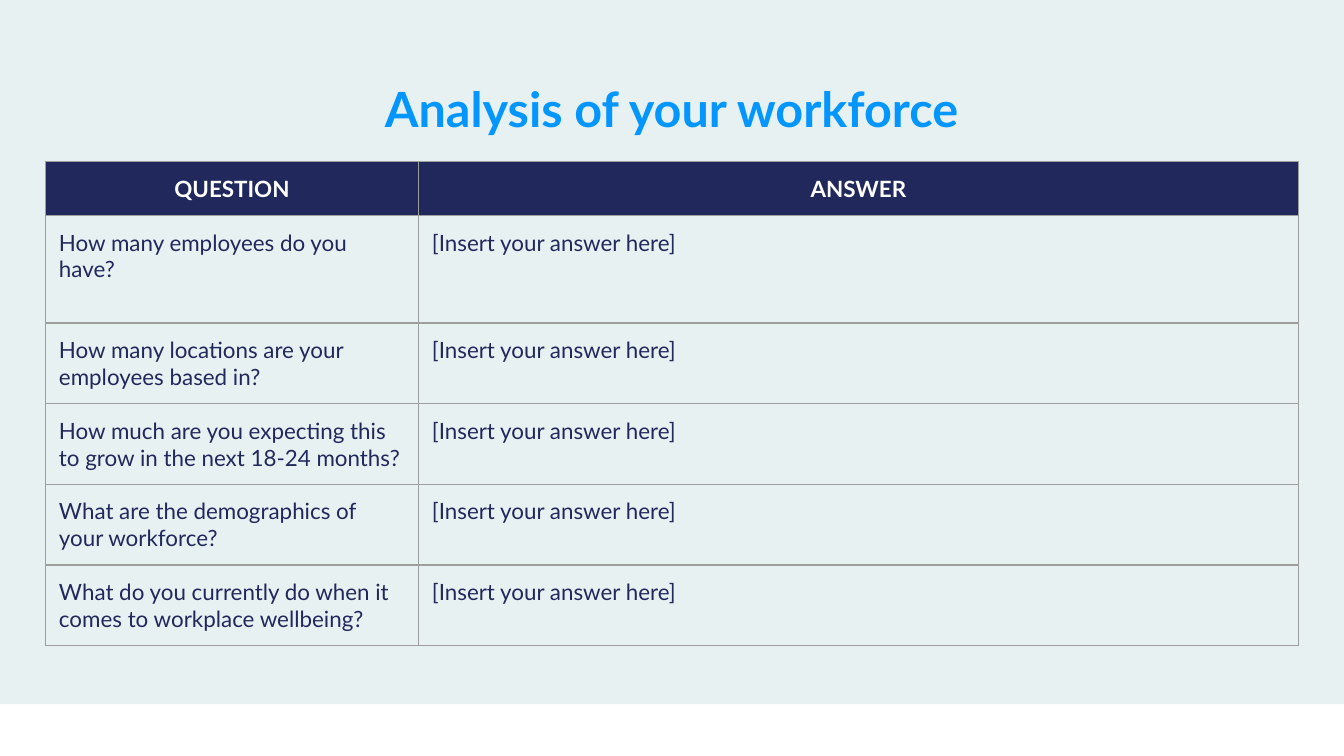
from lxml.etree import SubElement
from pptx import Presentation
from pptx.dml.color import RGBColor
from pptx.enum.shapes import MSO_SHAPE
from pptx.enum.text import MSO_ANCHOR, PP_ALIGN
from pptx.oxml.ns import qn
from pptx.util import Pt

TITLE = "Analysis of your workforce"
HEADERS = ["QUESTION", "ANSWER"]
QUESTIONS = [
    "How many employees do you have?",
    "How many locations are your employees based in?",
    "How much are you expecting this to grow in the next 18-24 months?",
    "What are the demographics of your workforce?",
    "What do you currently do when it comes to workplace wellbeing?",
]
ANSWER = "[Insert your answer here]"

PALE, NAVY, BLUE, WHITE, GREY = "E8F1F2", "21295C", "0496FF", "FFFFFF", "9E9E9E"
TITLE_FORMAT = {"size": Pt(26), "bold": True, "color": BLUE}
HEADER_FORMAT = {"size": Pt(12), "bold": True, "color": WHITE}
BODY_FORMAT = {"size": Pt(12), "bold": False, "color": NAVY}

SLIDE_WIDTH, SLIDE_HEIGHT = 720, 405
MARGIN = 24.4
CONTENT_WIDTH = SLIDE_WIDTH - 2 * MARGIN
INSET = 7.2
QUESTION_WIDTH = 199.8
COLUMN_WIDTHS = [QUESTION_WIDTH, CONTENT_WIDTH - QUESTION_WIDTH]
LINE_HEIGHT = 14.4
TEXT_LINES = [1, 3, 2, 2, 2, 2]
ROW_HEIGHTS = [lines * LINE_HEIGHT + 2 * INSET for lines in TEXT_LINES]


def color(value):
    return RGBColor.from_string(value)


def write(paragraph, text, formats, alignment):
    paragraph.alignment = alignment
    run = paragraph.add_run()
    run.text = text
    run.font.name = "Lato"
    for name, value in formats.items():
        if name == "color":
            run.font.color.rgb = color(value)
        else:
            setattr(run.font, name, value)


def set_insets(target, prefix=""):
    for side in ("left", "right", "top", "bottom"):
        setattr(target, f"margin_{side}", Pt(INSET))


def add_borders(cell):
    properties = cell._tc.get_or_add_tcPr()
    for tag in ("a:lnL", "a:lnR", "a:lnT", "a:lnB"):
        line = SubElement(properties, qn(tag), w=str(Pt(0.75)))
        fill = SubElement(line, qn("a:solidFill"))
        SubElement(fill, qn("a:srgbClr"), val=GREY)


def add_background(slide):
    shape = slide.shapes.add_shape(MSO_SHAPE.RECTANGLE, 0, 0, Pt(SLIDE_WIDTH), Pt(377.3))
    shape.shadow.inherit = False
    shape.fill.solid()
    shape.fill.fore_color.rgb = color(PALE)
    shape.line.fill.background()


def add_title(slide):
    box = slide.shapes.add_textbox(Pt(MARGIN), Pt(35.3), Pt(CONTENT_WIDTH), Pt(45.4))
    frame = box.text_frame
    frame.word_wrap = True
    frame.vertical_anchor = MSO_ANCHOR.TOP
    set_insets(frame)
    write(frame.paragraphs[0], TITLE, TITLE_FORMAT, PP_ALIGN.CENTER)


def add_question_table(slide):
    rows = [HEADERS] + [[question, ANSWER] for question in QUESTIONS]
    table = slide.shapes.add_table(
        len(rows), len(HEADERS), Pt(MARGIN), Pt(86.6),
        Pt(CONTENT_WIDTH), Pt(sum(ROW_HEIGHTS))).table
    table.horz_banding = False
    for column, width in zip(table.columns, COLUMN_WIDTHS):
        column.width = Pt(width)
    for row_index, (row, height, texts) in enumerate(zip(table.rows, ROW_HEIGHTS, rows)):
        row.height = Pt(height)
        for cell, text in zip(row.cells, texts):
            set_insets(cell)
            add_borders(cell)
            paragraph = cell.text_frame.paragraphs[0]
            if row_index == 0:
                cell.fill.solid()
                cell.fill.fore_color.rgb = color(NAVY)
                write(paragraph, text, HEADER_FORMAT, PP_ALIGN.CENTER)
            else:
                cell.fill.background()
                write(paragraph, text, BODY_FORMAT, PP_ALIGN.LEFT)


def main():
    presentation = Presentation()
    presentation.slide_width = Pt(SLIDE_WIDTH)
    presentation.slide_height = Pt(SLIDE_HEIGHT)
    slide = presentation.slides.add_slide(presentation.slide_layouts[6])
    add_background(slide)
    add_title(slide)
    add_question_table(slide)
    presentation.save("out.pptx")


if __name__ == "__main__":
    main()
